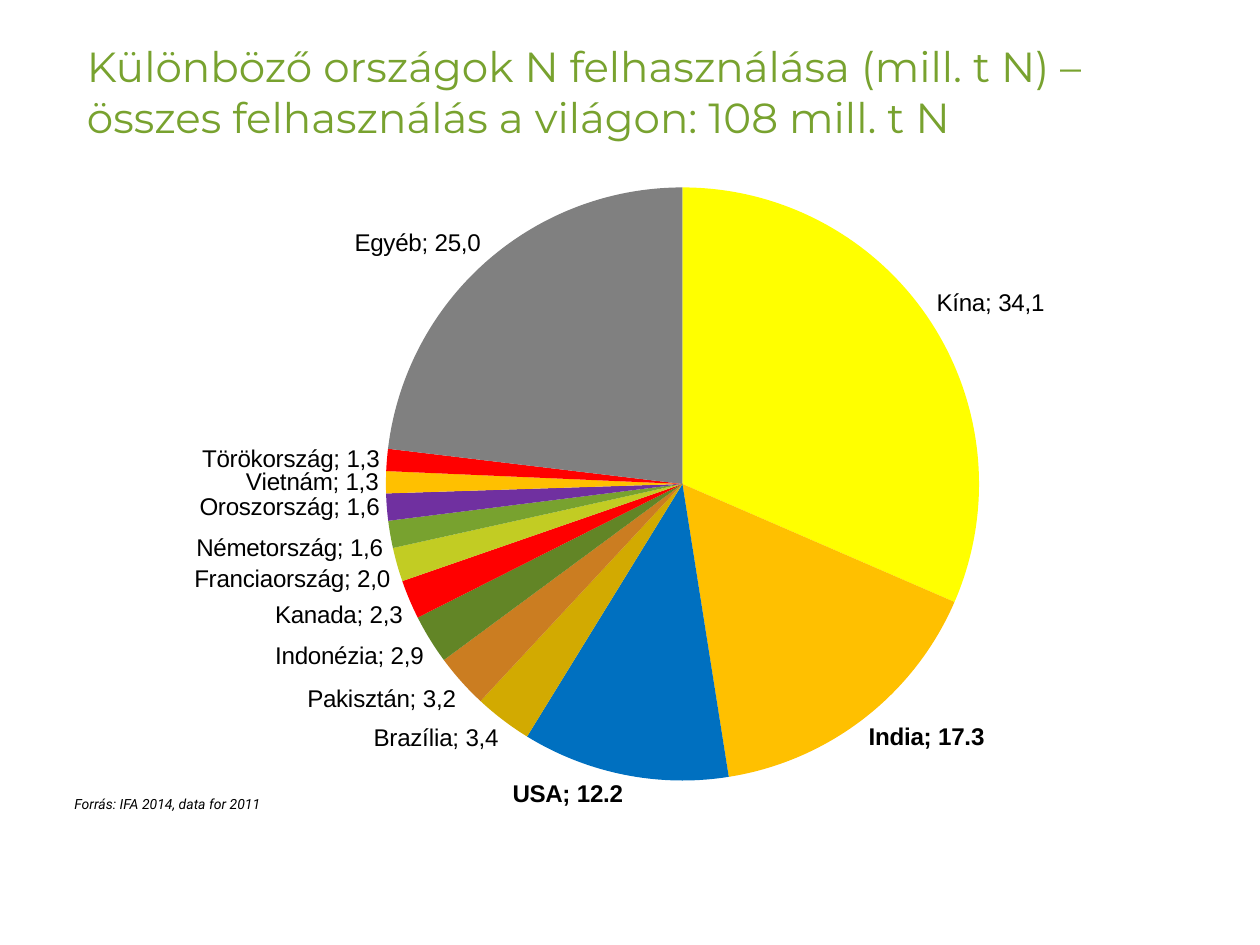
from lxml import etree
from pptx import Presentation
from pptx.chart.data import CategoryChartData
from pptx.dml.color import RGBColor
from pptx.enum.chart import XL_CHART_TYPE, XL_LABEL_POSITION
from pptx.enum.text import MSO_ANCHOR, MSO_AUTO_SIZE, PP_ALIGN
from pptx.oxml.ns import qn
from pptx.util import Pt

COLORS = {
    "title": "78A22F", "text": "000000",
    "yellow": "FFFF00", "amber": "FFC000", "blue": "0070C0", "gold": "D2AA01",
    "orange": "CB7D21", "moss": "628526", "red": "FF0000", "lime": "C2CC23",
    "green": "78A22F", "purple": "7030A0", "grey": "808080",
}

# Category, million tonnes of N, slice colour, own label (None: automatic label)
COUNTRIES = [
    ("China", 34.1, "yellow", "Kína; 34,1"),
    ("India", 17.3, "amber", None),
    ("USA", 12.2, "blue", None),
    ("Brasilia", 3.4, "gold", "Brazília; 3,4"),
    ("Pakistan", 3.2, "orange", "Pakisztán; 3,2"),
    ("Indonesia", 2.9, "moss", "Indonézia; 2,9"),
    ("Canada", 2.3, "red", "Kanada; 2,3"),
    ("France", 2.0, "lime", "Franciaország; 2,0"),
    ("Germany", 1.6, "green", "Németország; 1,6"),
    ("Russia", 1.6, "purple", "Oroszország; 1,6"),
    ("Vietnam", 1.3, "amber", "Vietnám; 1,3"),
    ("Turkey", 1.3, "red", "Törökország; 1,3"),
    ("Others", 25.0, "grey", "Egyéb; 25,0"),
]


def format_font(font, name, size, color="text", bold=False, italic=False):
    font.name, font.size = name, Pt(size)
    font.bold, font.italic = bold, italic
    font.color.rgb = RGBColor.from_string(COLORS[color])


def write_text(text_frame, text, **font_format):
    paragraph = text_frame.paragraphs[0]
    run = paragraph.add_run()
    run.text = text
    format_font(run.font, **font_format)
    return paragraph


def place(shape, box):
    shape.left, shape.top, shape.width, shape.height = (Pt(length) for length in box)


def add_title(slide, box, text):
    title = slide.shapes.title
    place(title, box)
    text_frame = title.text_frame
    text_frame.word_wrap = True
    text_frame.auto_size = MSO_AUTO_SIZE.NONE
    text_frame.vertical_anchor = MSO_ANCHOR.MIDDLE
    paragraph = write_text(text_frame, text, name="Montserrat", size=24, color="title")
    paragraph.alignment = PP_ALIGN.LEFT


def add_source_note(slide, box, text):
    text_frame = slide.shapes.add_textbox(*(Pt(length) for length in box)).text_frame
    text_frame.word_wrap = True
    text_frame.margin_left = text_frame.margin_right = 0
    text_frame.margin_top = text_frame.margin_bottom = 0
    write_text(text_frame, text, name="Roboto", size=8, italic=True)


def set_plot_layout(chart, **fractions):
    plot_area = chart._chartSpace.chart.plotArea
    for old_layout in plot_area.findall(qn("c:layout")):
        plot_area.remove(old_layout)
    layout = etree.Element(qn("c:layout"))
    manual = etree.SubElement(layout, qn("c:manualLayout"))
    settings = {"layoutTarget": "inner", "xMode": "edge", "yMode": "edge", **fractions}
    for tag, value in settings.items():
        etree.SubElement(manual, qn(f"c:{tag}")).set("val", str(value))
    plot_area.insert(0, layout)


def add_country_pie(slide, box):
    data = CategoryChartData(number_format="#,##0.0")
    data.categories = [country[0] for country in COUNTRIES]
    data.add_series("Series 1", [country[1] for country in COUNTRIES])
    frame = slide.shapes.add_chart(
        XL_CHART_TYPE.PIE, *(Pt(length) for length in box), data)
    chart = frame.chart
    chart.has_title = chart.has_legend = False
    format_font(chart.font, "Arial", 17.7)
    set_plot_layout(chart, x=0.29, y=0.03, w=0.5, h=0.9)

    # Automatic labels: category and value
    plot = chart.plots[0]
    plot.vary_by_categories = True
    series = plot.series[0]
    labels = series.data_labels
    labels.show_category_name = labels.show_value = True
    labels.show_percentage = False
    labels.number_format, labels.number_format_is_linked = "#,##0.0", False
    labels.position = XL_LABEL_POSITION.OUTSIDE_END
    format_font(labels.font, "Arial", 13.8, bold=True)
    separator = etree.Element(qn("c:separator"))
    separator.text = "; "
    labels._element.find(qn("c:showBubbleSize")).addnext(separator)

    # Slice colours and own labels
    for index, (_, _, color, label_text) in enumerate(COUNTRIES):
        point = series.points[index]
        point.format.fill.solid()
        point.format.fill.fore_color.rgb = RGBColor.from_string(COLORS[color])
        point.format.line.fill.background()
        if label_text:
            label = point.data_label
            write_text(label.text_frame, label_text, name="Arial", size=13.8)
            label.position = XL_LABEL_POSITION.OUTSIDE_END


def main():
    presentation = Presentation()
    presentation.slide_width, presentation.slide_height = Pt(720), Pt(540)
    slide = presentation.slides.add_slide(presentation.slide_layouts[5])
    add_country_pie(slide, (23.8, 95.8, 678.2, 376.6))
    add_source_note(slide, (42.5, 454.3, 249.8, 18), "Forrás: IFA 2014, data for 2011")
    add_title(slide, (42.5, 18.7, 635, 67),
              "Különböző országok N felhasználása (mill. t N) – "
              "összes felhasználás a világon: 108 mill. t N")
    presentation.save("out.pptx")


if __name__ == "__main__":
    main()
